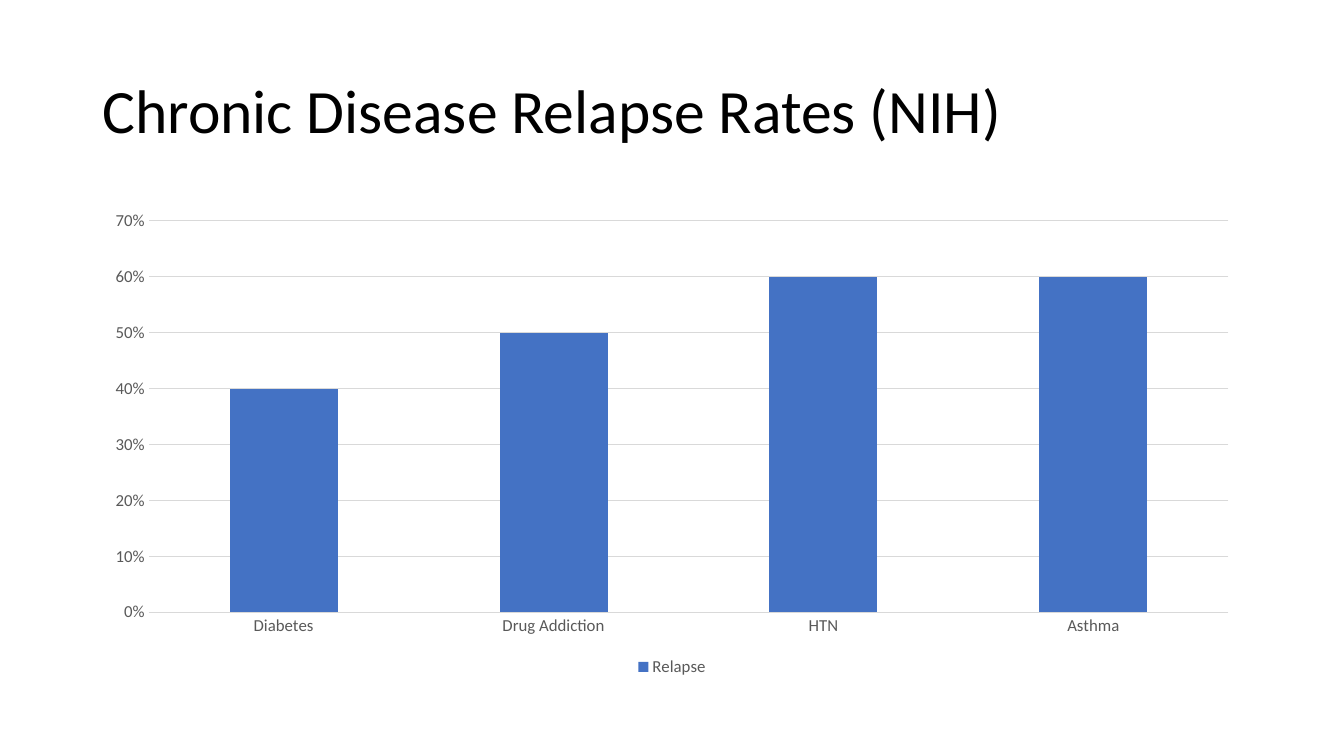
from pptx import Presentation
from pptx.chart.data import CategoryChartData as Data
from pptx.dml.color import RGBColor as Rgb
from pptx.enum.chart import XL_CHART_TYPE as Kind, XL_LEGEND_POSITION as Spot, XL_TICK_MARK as Tick
from pptx.enum.text import MSO_ANCHOR as Anchor
from pptx.util import Cm, Pt

HUES = {"title": "000000", "label": "595959", "grid": "D9D9D9", "bar": "4472C4"}
FACE = "Calibri"
RATES = {"Diabetes": 0.4, "Drug Addiction": 0.5, "HTN": 0.6, "Asthma": 0.6}


def hue(name):
    return Rgb.from_string(HUES[name])


def style(font, size, name):
    font.name = FACE
    font.size = Pt(size)
    font.color.rgb = hue(name)


def rule(line):
    line.color.rgb = hue("grid")
    line.width = Pt(0.75)


def add_title(slide, box, text):
    frame = slide.shapes.add_textbox(*box).text_frame
    frame.word_wrap = True
    frame.vertical_anchor = Anchor.MIDDLE
    para = frame.paragraphs[0]
    para.line_spacing = 0.9
    run = para.add_run()
    run.text = text
    style(run.font, 44, "title")


def add_bars(slide, box, name, rates):
    data = Data(number_format="0%")
    data.categories = list(rates)
    data.add_series(name, list(rates.values()))
    chart = slide.shapes.add_chart(Kind.COLUMN_CLUSTERED, *box, data).chart
    style(chart.font, 12, "label")
    chart.has_title = False
    chart.has_legend = True
    chart.legend.position = Spot.BOTTOM
    chart.legend.include_in_layout = False
    style(chart.legend.font, 12, "label")

    plot = chart.plots[0]
    plot.gap_width = 150
    plot.vary_by_categories = False
    fill = plot.series[0].format.fill
    fill.solid()
    fill.fore_color.rgb = hue("bar")

    for axis in (chart.category_axis, chart.value_axis):
        axis.major_tick_mark = axis.minor_tick_mark = Tick.NONE
        style(axis.tick_labels.font, 12, "label")
    rule(chart.category_axis.format.line)
    scale = chart.value_axis
    scale.minimum_scale, scale.maximum_scale, scale.major_unit = 0, 0.7, 0.1
    scale.format.line.fill.background()
    scale.has_major_gridlines = True
    rule(scale.major_gridlines.format.line)
    scale.tick_labels.number_format = "0%"
    scale.tick_labels.number_format_is_linked = False


def main():
    deck = Presentation()
    deck.slide_width, deck.slide_height = Cm(33.87), Cm(19.05)
    slide = deck.slides.add_slide(deck.slide_layouts[6])
    left, width = Cm(2.33), Cm(29.21)
    add_title(slide, (left, Cm(1.01), width, Cm(3.68)), "Chronic Disease Relapse Rates (NIH)")
    add_bars(slide, (left, Cm(5.07), width, Cm(12.09)), "Relapse", RATES)
    deck.save("out.pptx")


if __name__ == "__main__":
    main()
